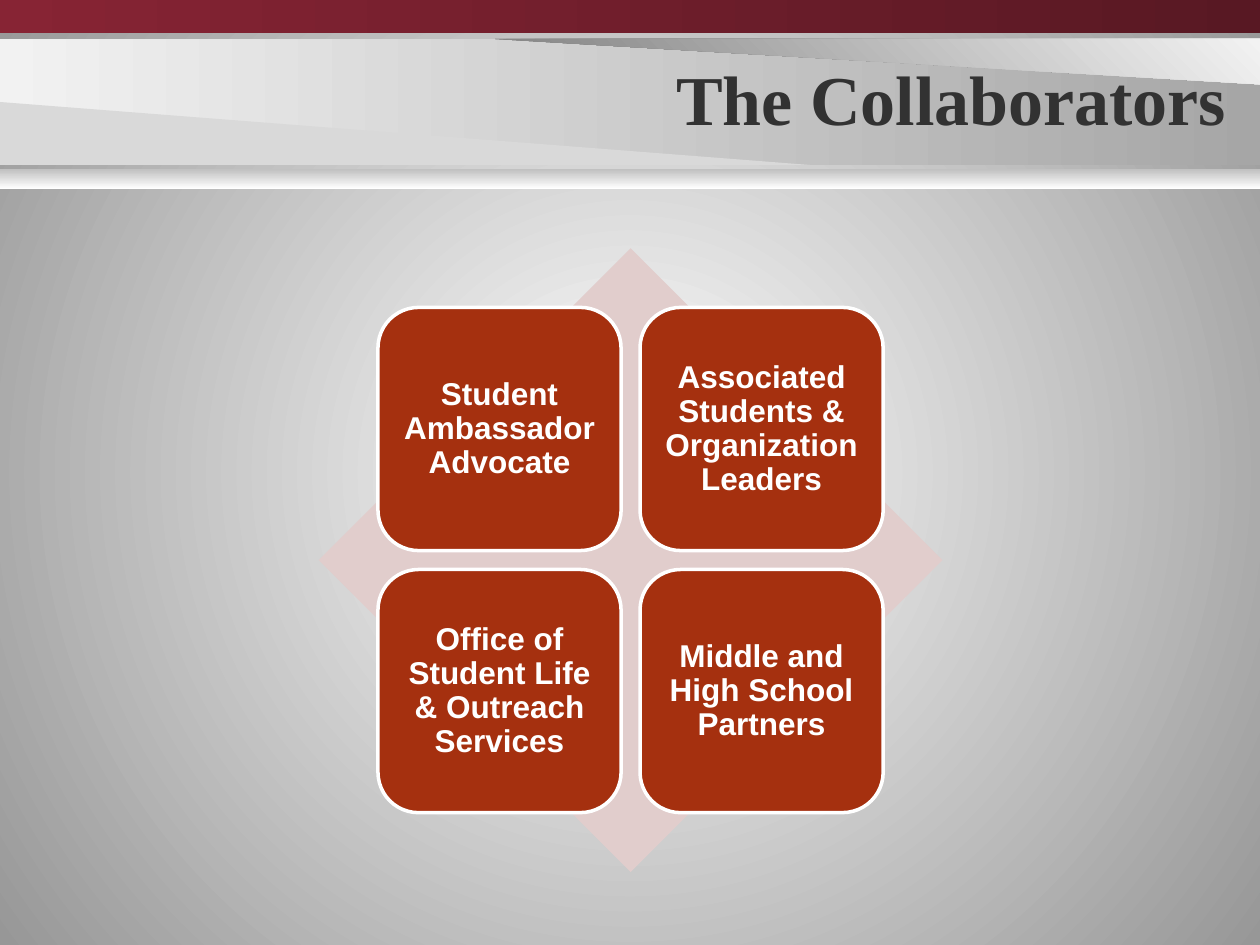
import pptx
import pptx.dml.color
import pptx.enum.shapes
import pptx.enum.text
import pptx.oxml
import pptx.oxml.ns
import pptx.util

Inches = pptx.util.Inches
Shapes = pptx.enum.shapes.MSO_SHAPE
Align = pptx.enum.text.PP_ALIGN
RADIAL = (
    '<a:path xmlns:a="http://schemas.openxmlformats.org/drawingml/2006/main" path="circle">'
    '<a:fillToRect l="50000" t="50000" r="50000" b="50000"/></a:path>'
)
COLLABORATORS = [
    "Student Ambassador Advocate",
    "Associated Students & Organization Leaders",
    "Office of Student Life & Outreach Services",
    "Middle and High School Partners",
]


def color(value):
    """Return the colour for a hex string."""
    return pptx.dml.color.RGBColor.from_string(value)


def set_attributes(target, values):
    """Set each named attribute of the target."""
    for name, value in values.items():
        setattr(target, name, value)


def paint(fill, colors, angle=0):
    """Fill with one colour, or with a linear gradient between two."""
    if len(colors) == 1:
        fill.solid()
        fill.fore_color.rgb = color(colors[0])
        return
    fill.gradient()
    fill.gradient_angle = angle
    for stop, value in zip(fill.gradient_stops, colors):
        stop.color.rgb = color(value)


def finish(shape, colors, angle=0):
    """Paint a shape and drop its outline and shadow."""
    shape.shadow.inherit = False
    shape.line.fill.background()
    paint(shape.fill, colors, angle)
    return shape


def add_preset(slide, preset, box, colors, angle=0):
    """Add a painted preset shape in a box given in inches."""
    shape = slide.shapes.add_shape(preset, *map(Inches, box))
    return finish(shape, colors, angle)


def add_wedge(slide, box, points, colors, angle=0):
    """Add a painted polygon whose points are relative to the box."""
    left, top = box[:2]
    corners = [(Inches(left + x), Inches(top + y)) for x, y in points]
    builder = slide.shapes.build_freeform(*corners[0])
    builder.add_line_segments(corners[1:], close=True)
    return finish(builder.convert_to_shape(), colors, angle)


def write(shape, text, alignment, frame_values, font_values, font_color):
    """Write one formatted paragraph in a shape."""
    frame = shape.text_frame
    frame.text = text
    set_attributes(frame, {
        "word_wrap": True,
        "vertical_anchor": pptx.enum.text.MSO_ANCHOR.MIDDLE,
        **frame_values,
    })
    paragraph = frame.paragraphs[0]
    paragraph.alignment = alignment
    set_attributes(paragraph.font, {"bold": True, **font_values})
    paragraph.font.color.rgb = color(font_color)
    return paragraph


def add_background(slide):
    """Give the slide a radial gradient background."""
    paint(slide.background.fill, ["FFFFFF", "979797"])
    gradient = slide.element.find(".//" + pptx.oxml.ns.qn("a:gradFill"))
    gradient.remove(gradient.find(pptx.oxml.ns.qn("a:lin")))
    gradient.append(pptx.oxml.parse_xml(RADIAL))


def add_header(slide, box):
    """Place the header bands and the title."""
    left, top, width, height = box
    band = (left, top + 0.31, width, 1)
    add_preset(slide, Shapes.RECTANGLE, band, ["F2F2F2", "A6A6A6"])
    add_wedge(slide, band, [(3.93, 0), (width, 0.36), (width, 0)],
              ["808080", "F2F2F2"], 45)
    add_wedge(slide, band, [(0, 0.5), (6.43, 1), (0, 1)], ["D9D9D9"])
    add_preset(slide, Shapes.RECTANGLE, (left, top, width, 0.26), ["872434", "581823"])
    add_preset(slide, Shapes.RECTANGLE, (left, top + height - 0.16, width, 0.16),
               ["BFBFBF", "FFFFFF"], 270)
    title = slide.shapes.title
    set_attributes(title, {
        "left": Inches(left + 2.58), "top": Inches(top + 0.3),
        "width": Inches(7.25), "height": Inches(0.95),
    })
    write(title, "The Collaborators", Align.RIGHT, {},
          {"name": "Times New Roman", "size": pptx.util.Pt(40)}, "323232")
    slide.shapes.element.append(title.element)


def add_matrix(slide, box, labels):
    """Place a diamond with a two by two grid of labelled tiles."""
    left, top, size = box[:3]
    tile, gap = 1.93, 0.15
    margin = (size - 2 * tile - gap) / 2
    insets = dict.fromkeys(
        ["margin_left", "margin_top", "margin_right", "margin_bottom"], Inches(0.07))
    add_preset(slide, Shapes.DIAMOND, box, ["E1CDCC"])
    for index, label in enumerate(labels):
        row, column = divmod(index, 2)
        place = (left + margin + column * (tile + gap),
                 top + margin + row * (tile + gap), tile, tile)
        shape = add_preset(slide, Shapes.ROUNDED_RECTANGLE, place, ["A5300F"])
        shape.line.color.rgb = color("FFFFFF")
        shape.line.width = pptx.util.Pt(2)
        paragraph = write(shape, label, Align.CENTER, insets,
                          {"name": "Arial", "size": pptx.util.Pt(18)}, "FFFFFF")
        paragraph.line_spacing = 0.9


def main():
    """Build the slide and save it."""
    presentation = pptx.Presentation()
    presentation.slide_width = Inches(10)
    presentation.slide_height = Inches(7.5)
    slide = presentation.slides.add_slide(presentation.slide_layouts[5])
    add_background(slide)
    add_header(slide, (0, 0, 10, 1.5))
    add_matrix(slide, (2.53, 1.97, 4.95, 4.95), COLLABORATORS)
    presentation.save("out.pptx")


if __name__ == "__main__":
    main()
